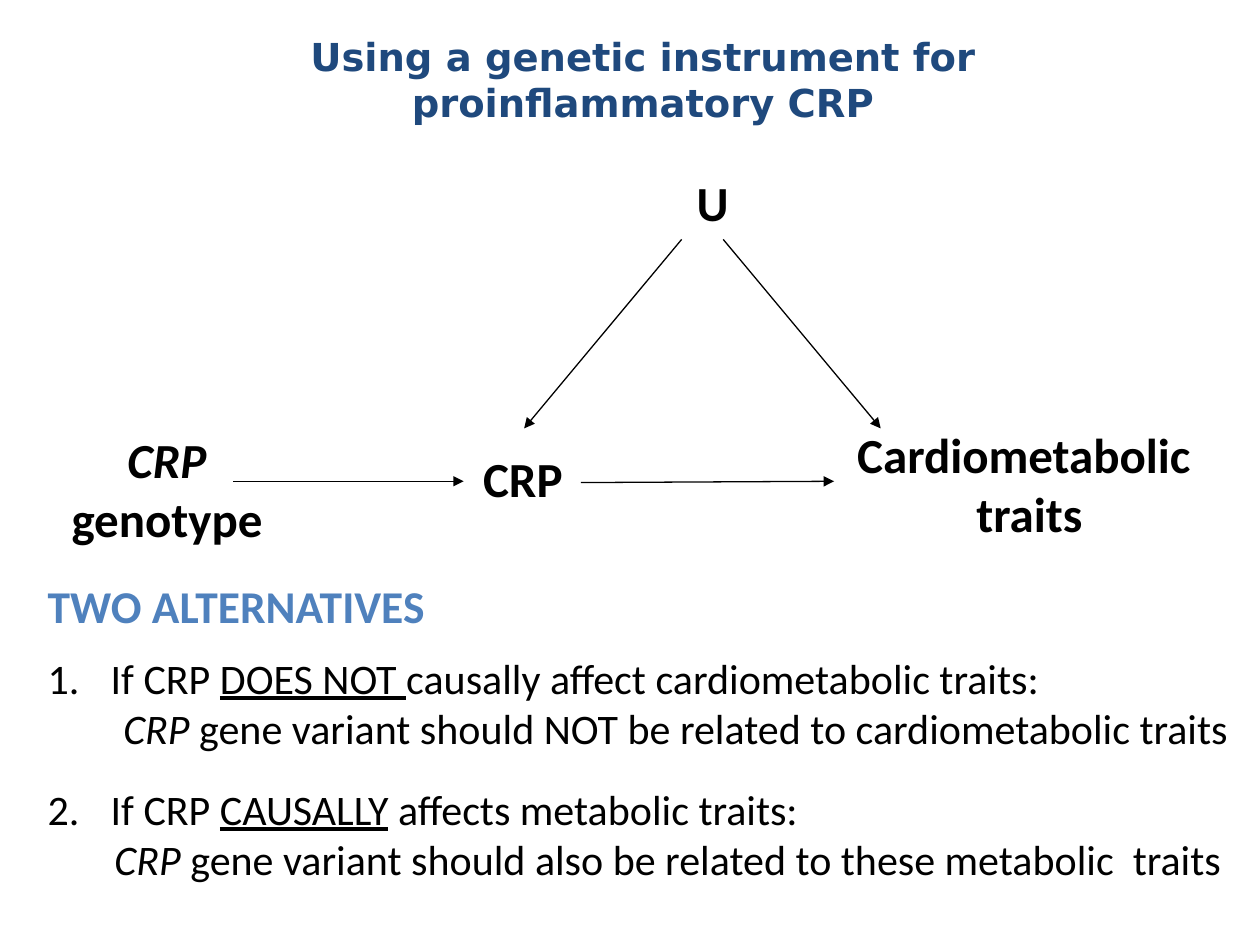
from typing import NamedTuple

from lxml import etree
from pptx import Presentation
from pptx.dml.color import RGBColor
from pptx.enum.shapes import MSO_CONNECTOR
from pptx.enum.text import PP_ALIGN
from pptx.oxml.ns import qn
from pptx.util import Inches, Pt

CENTER, LEFT = PP_ALIGN.CENTER, PP_ALIGN.LEFT
STRAIGHT = MSO_CONNECTOR.STRAIGHT
COLORS = {"title": "1F497D", "text": "000000", "heading": "4F81BD"}


class Run(NamedTuple):
    text: str
    italic: bool = False
    underline: bool = False


class Para(NamedTuple):
    runs: list[Run]
    size: int = 24
    color: str = "text"
    bold: bool = False
    font: str = "Calibri"
    align: PP_ALIGN = LEFT
    before: float = 0
    after: float = 0
    margin: float = 0
    number: int = 0


class Box(NamedTuple):
    left: float
    top: float
    width: float
    height: float
    paras: list[Para]


class Arrow(NamedTuple):
    x1: float
    y1: float
    x2: float
    y2: float


def title(text: str) -> Para:
    return Para([Run(text)], 22, "title", True, "DejaVu Sans", CENTER)


def node(*runs: Run) -> Para:
    return Para(list(runs), 28, bold=True, align=CENTER)


def alternative(number: int, before: float, verb: str, rest: str) -> Para:
    runs = [Run("If CRP "), Run(verb, underline=True), Run(rest)]
    return Para(runs, before=before, margin=0.5, number=number)


def consequence(margin: float, rest: str) -> Para:
    return Para([Run("CRP", italic=True), Run(rest)], margin=margin)


BOXES = [
    Box(0.59, 0.21, 9.13, 1.14, [title("Using a genetic instrument for "),
                                 title("proinflammatory CRP ")]),
    # Causal diagram nodes
    Box(4.74, 1.32, 1.83, 0.57, [node(Run("U"))]),
    Box(6.69, 3.32, 2.96, 1.04, [node(Run("Cardiometabolic ")), node(Run("traits"))]),
    Box(0.28, 3.36, 2.09, 1.04, [node(Run("CRP ", italic=True), Run("genotype"))]),
    Box(2.95, 3.51, 2.4, 0.57, [node(Run("CRP"))]),
    # Two alternatives
    Box(0.28, 4.54, 9.69, 2.88, [
        Para([Run("TWO ALTERNATIVES")], 26, "heading", True, after=6),
        alternative(1, 5, "DOES NOT ", "causally affect cardiometabolic traits:"),
        consequence(0.6, " gene variant should NOT be related to cardiometabolic traits"),
        alternative(2, 17.3, "CAUSALLY", " affects metabolic traits:"),
        consequence(0.53, " gene variant should also be related to these metabolic  traits"),
    ]),
]

ARROWS = [
    Arrow(5.41, 1.9, 4.16, 3.4),
    Arrow(5.74, 1.9, 6.99, 3.4),
    Arrow(1.85, 3.82, 3.68, 3.82),
    Arrow(4.61, 3.83, 6.62, 3.82),
]


def fill_paragraph(p, para: Para) -> None:
    p.alignment = para.align
    p.space_before, p.space_after = Pt(para.before), Pt(para.after)
    p.font.name, p.font.size, p.font.bold = para.font, Pt(para.size), para.bold
    p.font.color.rgb = RGBColor.from_string(COLORS[para.color])
    for run in para.runs:
        r = p.add_run()
        r.text = run.text
        if run.italic:
            r.font.italic = True
        if run.underline:
            r.font.underline = True
    pPr = p._p.get_or_add_pPr()
    pPr.set("marL", str(Inches(para.margin)))
    if para.number:
        # Hanging automatic number
        pPr.set("indent", str(-Inches(para.margin)))
        bullet = etree.Element(qn("a:buAutoNum"), type="arabicPeriod",
                               startAt=str(para.number))
        pPr.find(qn("a:defRPr")).addprevious(bullet)


def draw_box(s, box: Box) -> None:
    sp = s.shapes.add_textbox(*(Inches(v) for v in box[:4]))
    tf = sp.text_frame
    tf.word_wrap = True
    for i, para in enumerate(box.paras):
        fill_paragraph(tf.add_paragraph() if i else tf.paragraphs[0], para)


def draw_arrow(s, arrow: Arrow) -> None:
    sp = s.shapes.add_connector(STRAIGHT, *(Inches(v) for v in arrow))
    sp.line.width = Pt(0.75)
    sp.line.color.rgb = RGBColor.from_string(COLORS["text"])
    etree.SubElement(sp.line._get_or_add_ln(), qn("a:tailEnd"), type="triangle")
    etree.SubElement(sp._element.spPr, qn("a:effectLst"))


def main() -> None:
    prs = Presentation()
    prs.slide_width, prs.slide_height = Inches(10), Inches(7.5)
    s = prs.slides.add_slide(prs.slide_layouts[6])
    for box in BOXES:
        draw_box(s, box)
    for arrow in ARROWS:
        draw_arrow(s, arrow)
    prs.save("out.pptx")


if __name__ == "__main__":
    main()
